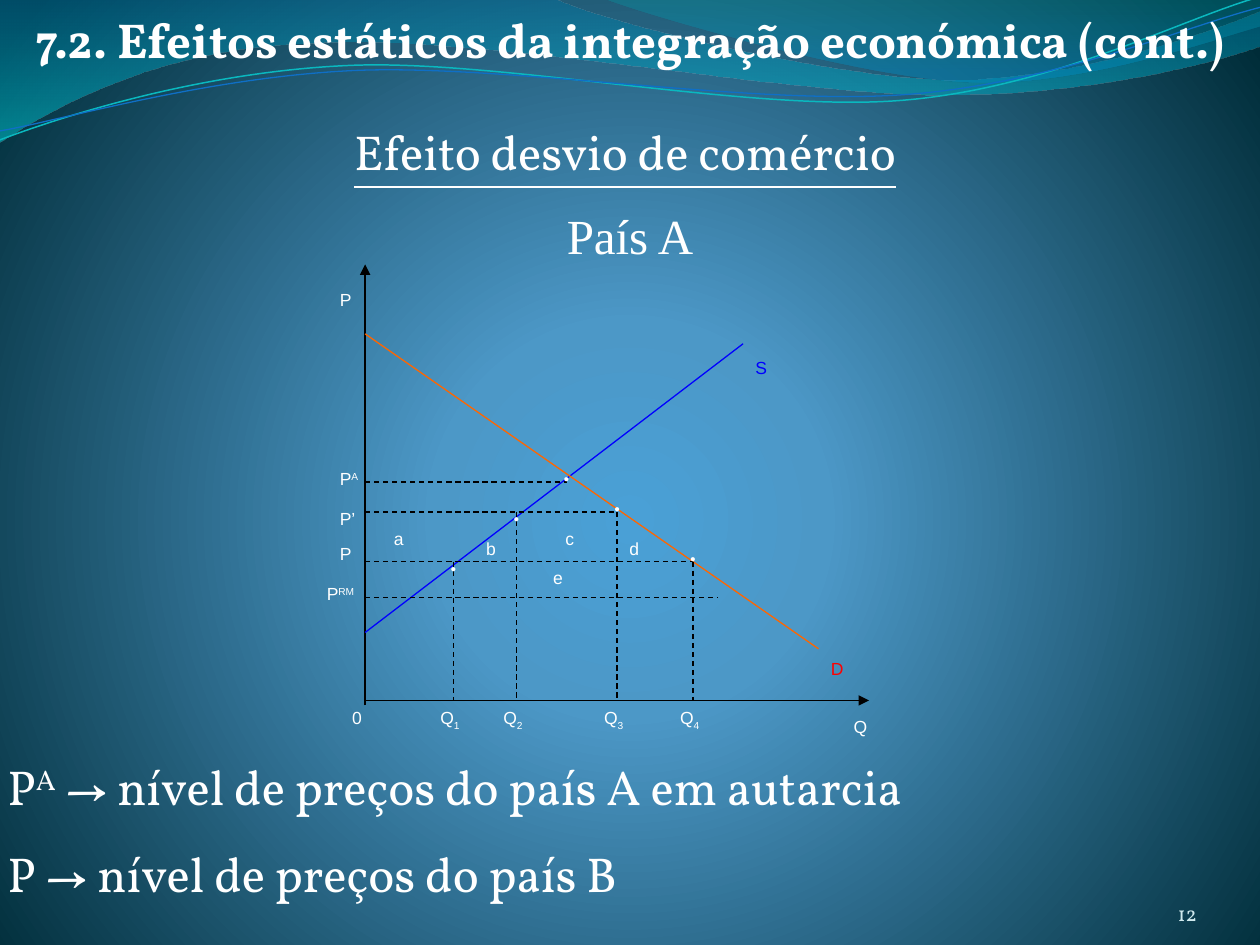
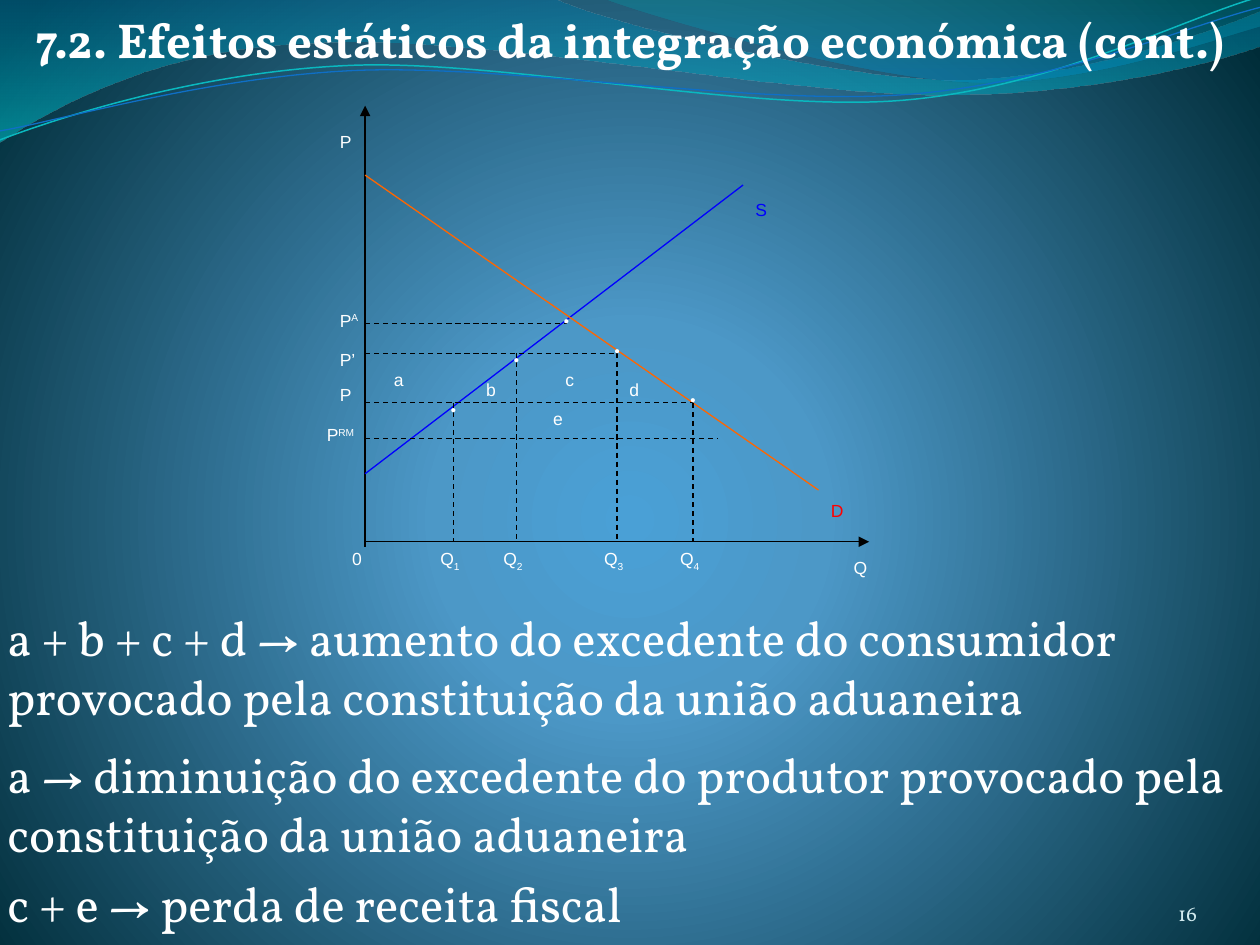
from dataclasses import dataclass

from lxml import etree
from pptx import Presentation
from pptx.dml.color import RGBColor
from pptx.enum.dml import MSO_LINE
from pptx.enum.shapes import MSO_CONNECTOR
from pptx.enum.text import MSO_ANCHOR as ANCHOR, MSO_AUTO_SIZE as AUTO, PP_ALIGN as ALIGN
from pptx.oxml import parse_xml
from pptx.oxml.ns import nsdecls, qn
from pptx.util import Cm, Pt


@dataclass(frozen=True)
class Theme:
    serif: str = "Vollkorn"
    roman: str = "Times New Roman"
    sans: str = "Arial"
    heading: float = 28
    label: float = 10
    number: float = 12
    line: float = 0.75
    white: str = "FFFFFF"
    axis: str = "000000"
    supply: str = "0000FF"
    demand: str = "FF6600"
    demand_label: str = "FF0000"
    page: str = "D1EAEE"


THEME = Theme()
WIDTH, HEIGHT = 25.4, 19.05
NOTE_LEFT = -0.1
ONE_LINE, TWO_LINES = 1.45, 2.64

TITLE = "7.2. Efeitos estáticos da integração económica (cont.)"
SLIDES = [
    {
        "number": "12",
        "headings": [
            ("Efeito desvio de comércio", NOTE_LEFT, 2.32, THEME.serif, True),
            ("País A", 0, 4.02, THEME.roman, False),
        ],
        "axis_y": 14.12,
        "notes": [
            (15.11, ONE_LINE, ("P", "A", " → nível de preços do país A em autarcia")),
            (16.87, ONE_LINE, ("P → nível de preços do país B",)),
        ],
    },
    {
        "number": "16",
        "headings": [],
        "axis_y": 10.92,
        "notes": [
            (12.12, TWO_LINES, ("a + b + c + d → aumento do excedente do consumidor "
                                "provocado pela constituição da união aduaneira",)),
            (14.88, TWO_LINES, ("a → diminuição do excedente do produtor provocado "
                                "pela constituição da união aduaneira",)),
            (17.48, ONE_LINE, ("c + e → perda de receita fiscal",)),
        ],
    },
]

AXIS_X = 7.36
Q1, Q2, Q_AUTARKY, Q3, Q4 = 1.78, 3.05, 4.06, 5.08, 6.61
P_AUTARKY, P_TARIFF, P_UNION, P_WORLD = 4.4, 3.8, 2.8, 2.08
AXES = [((0, -0.1), (0, 8.79)), ((0, 0), (10.16, 0))]
CURVES = [
    ((0, 1.37), (7.62, 7.19), THEME.supply),
    ((0, 7.39), (9.14, 1.04), THEME.demand),
]
PRICE_LINES = [(P_AUTARKY, Q_AUTARKY), (P_UNION, Q4), (P_TARIFF, Q3), (P_WORLD, 7.11)]
QUANTITY_LINES = [(Q4, P_UNION), (Q3, P_TARIFF), (Q2, P_TARIFF), (Q1, P_UNION)]
DOTS = [(Q4, P_UNION), (Q_AUTARKY, P_AUTARKY), (Q3, P_TARIFF),
        (Q2, P_TARIFF - 0.2), (Q1, P_UNION - 0.2)]
QUANTITIES = [(0, ("0",)), (Q1, ("Q", "1")), (Q2, ("Q", "2")),
              (Q3, ("Q", "3")), (Q4, ("Q", "4"))]
LABELS = [
    (("P",), -0.76, 8.41, THEME.white),
    (("P", "A"), -0.76, 4.8, THEME.white),
    (("P’",), -0.76, 4.01, THEME.white),
    (("P",), -0.76, 3.3, THEME.white),
    (("P", "RM"), -1.02, 2.49, THEME.white),
    (("Q",), 9.6, -0.18, THEME.white),
    (("S",), 7.62, 7.04, THEME.supply),
    (("D",), 9.14, 0.97, THEME.demand_label),
    (("a",), 0.33, 3.61, THEME.white),
    (("b",), 2.19, 3.4, THEME.white),
    (("c",), 3.79, 3.61, THEME.white),
    (("d",), 5.08, 3.4, THEME.white),
    (("e",), 3.54, 2.82, THEME.white),
]

BACKDROP = [(0, "4AA0D6", 100), (25, "4C98C7", 100), (100, "002C38", 100)]
BACKDROP_FOCUS = ('<a:path path="circle"><a:fillToRect l="10000" t="110000" '
                  'r="10000" b="100000"/></a:path>')
DOWNWARDS = '<a:lin ang="5400000" scaled="0"/>'
WAVES = [
    ([(0, 0), (11.18, -0.03),
      (12.09, 0.43, 16.87, 1.6, 19.25, 1.6), (21.67, 1.6, 24.33, 0.66, 25.4, 0.23),
      (25.43, 0.91),
      (24.97, 1.12, 22.1, 1.93, 18.95, 1.91), (15.8, 1.91, 9.7, 0.71, 6.53, 0.86),
      (3.28, 0.91, 1.17, 2.11, -0.03, 2.87), (0, 0)],
     [(0, "0074A1", 45), (100, "00C6CF", 55)]),
    ([(12.17, -0.03),
      (12.93, 0.28, 17.32, 1.57, 19.53, 1.65), (21.74, 1.75, 24.41, 0.81, 25.4, 0.53),
      (25.4, 0), (12.17, -0.03)],
     [(0, "00A1A9", 30), (80, "008BBF", 45)]),
]
RIPPLES = [
    ([(0, 2.82),
      (1.22, 2.36, 4.01, 1.45, 7.04, 1.32), (10.03, 1.19, 15.06, 2.26, 18.11, 2.03),
      (21.16, 1.8, 23.83, 0.38, 25.35, -0.05)], "0AB8BF", 0.85),
    ([(0, 2.64),
      (1.19, 2.44, 4.17, 1.55, 7.19, 1.42), (10.24, 1.3, 15.16, 2.13, 18.21, 1.91),
      (21.23, 1.7, 23.9, 0.53, 25.4, 0.15)], "0F6FC6", 0.75),
]


def rgb(colour):
    return RGBColor.from_string(colour)


def apply_gradient(fill, owner, stops, direction):
    fill.solid()
    solid = next(owner.iter(qn("a:solidFill")))
    marks = "".join(
        f'<a:gs pos="{pos * 1000}"><a:srgbClr val="{colour}">'
        f'<a:alpha val="{alpha * 1000}"/></a:srgbClr></a:gs>'
        for pos, colour, alpha in stops)
    solid.getparent().replace(solid, parse_xml(
        f'<a:gradFill {nsdecls("a")} rotWithShape="1">'
        f'<a:gsLst>{marks}</a:gsLst>{direction}</a:gradFill>'))


def add_outline(slide, segments, close):
    first, *rest = [(Cm(x), Cm(y)) for segment in segments
                    for x, y in zip(segment[::2], segment[1::2])]
    builder = slide.shapes.build_freeform(*first)
    builder.add_line_segments(rest, close=close)
    outline = builder.convert_to_shape()
    outline.shadow.inherit = False
    bend(outline, segments[1:])
    return outline


def bend(outline, segments):
    corners = iter(list(outline.element.iter(qn("a:lnTo"))))
    for segment in segments:
        steps = [next(corners) for _ in segment[::2]]
        if len(steps) == 3:
            curve = etree.Element(qn("a:cubicBezTo"))
            steps[0].addprevious(curve)
            for step in steps:
                curve.append(step[0])
                step.getparent().remove(step)


def decorate_master(master, slide):
    apply_gradient(master.background.fill, master.element, BACKDROP, BACKDROP_FOCUS)
    outlines = []
    for segments, stops in WAVES:
        wave = add_outline(slide, segments, True)
        wave.line.fill.background()
        apply_gradient(wave.fill, wave.element.spPr, stops, DOWNWARDS)
        outlines.append(wave)
    for segments, colour, weight in RIPPLES:
        ripple = add_outline(slide, segments, False)
        ripple.fill.background()
        ripple.line.color.rgb = rgb(colour)
        ripple.line.width = Pt(weight)
        outlines.append(ripple)
    for order, outline in enumerate(outlines):
        outline.element.nvSpPr.cNvPr.set("id", str(100 + order))
        master.shapes.element.insert(2 + order, outline.element)


def set_frame(shape, anchor=ANCHOR.TOP):
    frame = shape.text_frame
    frame.word_wrap = True
    frame.auto_size = AUTO.NONE
    frame.vertical_anchor = anchor
    return frame


def style(paragraph, font, size, colour, align=ALIGN.LEFT, bold=False, underline=False):
    paragraph.alignment = align
    for run in paragraph.runs:
        run.font.name = font
        run.font.size = Pt(size)
        run.font.color.rgb = rgb(colour)
        run.font.bold = bold
        run.font.underline = underline


def write_parts(paragraph, parts, shift):
    paragraph.text = parts[0]
    for order, part in enumerate(parts[1:], 1):
        run = paragraph.add_run()
        run.text = part
        if order % 2:
            run.font._element.set("baseline", str(shift * 1000))


def add_text(slide, box, parts, font, size, colour, anchor=ANCHOR.TOP, shift=30, **look):
    frame = set_frame(slide.shapes.add_textbox(*map(Cm, box)), anchor)
    write_parts(frame.paragraphs[0], parts, shift)
    style(frame.paragraphs[0], font, size, colour, **look)
    return frame


def add_diagram(slide, axis_y):
    def draw(start, end, colour=THEME.axis, dashed=False, arrow=False):
        (x1, y1), (x2, y2) = start, end
        line = slide.shapes.add_connector(
            MSO_CONNECTOR.STRAIGHT, Cm(AXIS_X + x1), Cm(axis_y - y1),
            Cm(AXIS_X + x2), Cm(axis_y - y2))
        line.line.color.rgb = rgb(colour)
        line.line.width = Pt(THEME.line)
        if dashed:
            line.line.dash_style = MSO_LINE.DASH
        if arrow:
            etree.SubElement(line.line._get_or_add_ln(), qn("a:tailEnd"), type="triangle")
        etree.SubElement(line.element.spPr, qn("a:effectLst"))

    def label(parts, x, y, colour=THEME.white, font=THEME.sans, shift=30):
        add_text(slide, (AXIS_X + x, axis_y - y, 2.54, 1.02), parts, font,
                 THEME.label, colour, shift=shift)

    for start, end in AXES:
        draw(start, end, arrow=True)
    for start, end, colour in CURVES:
        draw(start, end, colour)
    for price, reach in PRICE_LINES:
        draw((0, price), (reach, price), dashed=True)
    for quantity, price in QUANTITY_LINES:
        draw((quantity, price), (quantity, 0), dashed=True)
    for x, y in DOTS:
        label(("•",), x - 0.31, y + 0.4, font=THEME.roman)
    for quantity, parts in QUANTITIES:
        label(parts, quantity - 0.51, 0, shift=-30)
    for parts, x, y, colour in LABELS:
        label(parts, x, y, colour)


def fill_slide(slide, content):
    title = slide.shapes.title
    title.left, title.top, title.width, title.height = map(Cm, (0, 0.06, WIDTH, ONE_LINE))
    frame = set_frame(title)
    frame.text = TITLE
    style(frame.paragraphs[0], THEME.serif, THEME.heading, THEME.white,
          align=ALIGN.CENTER, bold=True)

    for text, left, top, font, underline in content["headings"]:
        add_text(slide, (left, top, WIDTH, ONE_LINE), (text,), font, THEME.heading,
                 THEME.white, ANCHOR.MIDDLE, align=ALIGN.CENTER, underline=underline)

    add_diagram(slide, content["axis_y"])

    for top, height, parts in content["notes"]:
        add_text(slide, (NOTE_LEFT, top, WIDTH, height), parts, THEME.serif,
                 THEME.heading, THEME.white, ANCHOR.MIDDLE)

    number = add_text(slide, (22.02, 17.65, 2.11, 1.02), (content["number"],), THEME.serif,
                      THEME.number, THEME.page, ANCHOR.BOTTOM, align=ALIGN.RIGHT)
    number.margin_left = number.margin_right = number.margin_top = number.margin_bottom = 0


def main():
    deck = Presentation()
    deck.slide_width, deck.slide_height = Cm(WIDTH), Cm(HEIGHT)
    slides = [deck.slides.add_slide(deck.slide_layouts[5]) for _ in SLIDES]
    decorate_master(deck.slide_master, slides[0])
    for slide, content in zip(slides, SLIDES):
        fill_slide(slide, content)
    deck.save("out.pptx")


if __name__ == "__main__":
    main()
